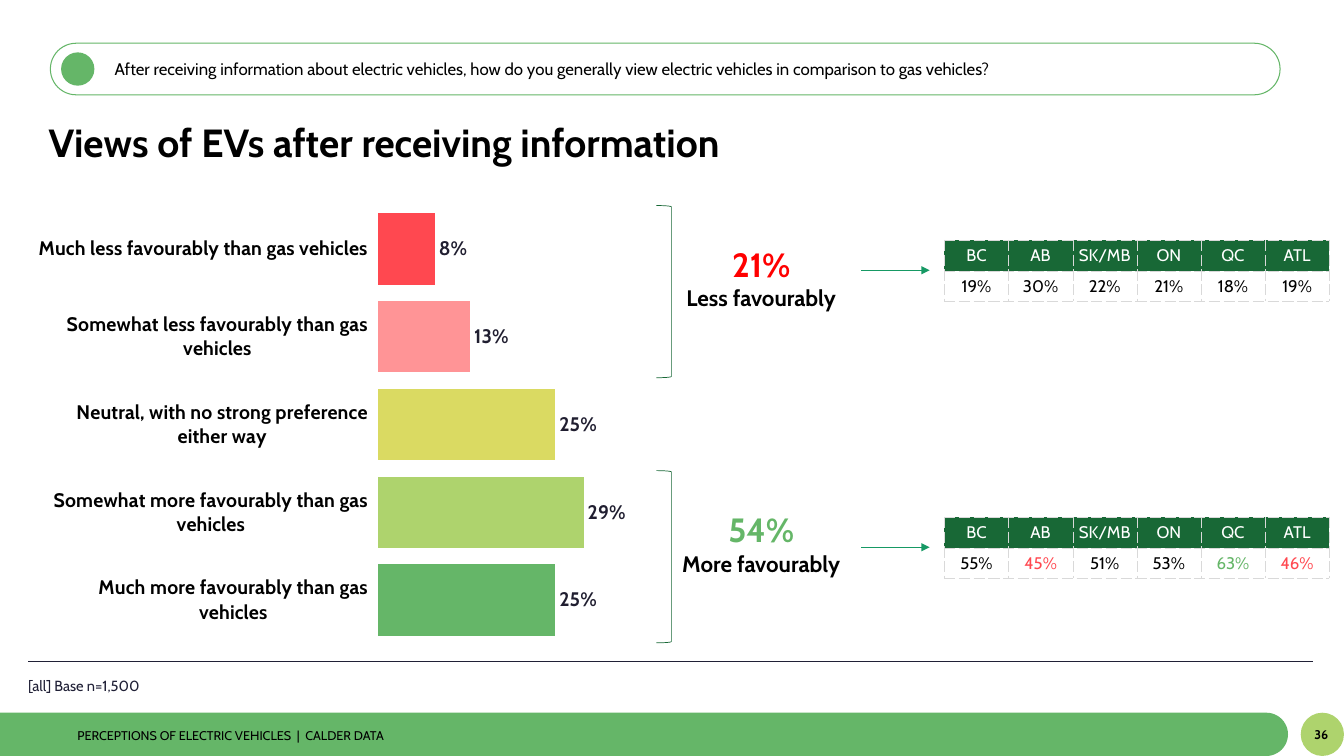
from math import cos, pi, sin

from lxml import etree
from pptx import Presentation
from pptx.chart.data import CategoryChartData
from pptx.dml.color import RGBColor
from pptx.enum.chart import XL_CHART_TYPE as CT, XL_LABEL_POSITION as LP, XL_TICK_MARK as TM
from pptx.enum.shapes import MSO_CONNECTOR as MC, MSO_SHAPE as MS
from pptx.enum.text import MSO_ANCHOR as MA, MSO_AUTO_SIZE as AS, PP_ALIGN as PA
from pptx.oxml import parse_xml
from pptx.oxml.ns import nsdecls, qn
from pptx.util import Cm, Pt

FONT = "Cabin"
BLACK = RGBColor(0x00, 0x00, 0x00)
WHITE = RGBColor(0xFF, 0xFF, 0xFF)
NAVY = RGBColor(0x20, 0x20, 0x36)
LABEL = RGBColor(0x20, 0x1E, 0x30)
GREEN = RGBColor(0x65, 0xB6, 0x68)
LIME = RGBColor(0xAE, 0xD3, 0x6D)
YELLOW = RGBColor(0xDA, 0xDA, 0x62)
PINK = RGBColor(0xFF, 0x94, 0x96)
CORAL = RGBColor(0xFF, 0x48, 0x50)
RED = RGBColor(0xFF, 0x00, 0x00)
FOREST = RGBColor(0x18, 0x68, 0x36)
TEAL = RGBColor(0x16, 0x99, 0x64)

REGIONS = ["BC", "AB", "SK/MB", "ON", "QC", "ATL"]
VIEWS = [
    ("Much less favourably than gas vehicles", 0.08, CORAL),
    ("Somewhat less favourably than gas vehicles", 0.13, PINK),
    ("Neutral, with no strong preference either way", 0.25, YELLOW),
    ("Somewhat more favourably than gas vehicles", 0.29, LIME),
    ("Much more favourably than gas vehicles", 0.25, GREEN),
]


def style(font, size, color, bold=False):
    font.name = FONT
    font.size = Pt(size)
    font.bold = bold
    font.color.rgb = color


def write(p, text, size, color, bold=False, align=PA.LEFT):
    p.alignment = align
    r = p.add_run()
    r.text = text
    style(r.font, size, color, bold)


def place(sp, x, y, w, h):
    sp.left, sp.top, sp.width, sp.height = Cm(x), Cm(y), Cm(w), Cm(h)


def add_text(s, x, y, w, h, lines, anchor=MA.TOP, align=PA.LEFT, spacing=None):
    tf = s.shapes.add_textbox(Cm(x), Cm(y), Cm(w), Cm(h)).text_frame
    tf.word_wrap = True
    tf.vertical_anchor = anchor
    for i, line in enumerate(lines):
        p = tf.add_paragraph() if i else tf.paragraphs[0]
        p.line_spacing = spacing
        write(p, *line, align=align)


def finish(sp, fill=None, line=None, width=0.75):
    sp.shadow.inherit = False
    if fill is None:
        sp.fill.background()
    else:
        sp.fill.solid()
        sp.fill.fore_color.rgb = fill
    if line is None:
        sp.line.fill.background()
    else:
        sp.line.color.rgb = line
        sp.line.width = Pt(width)


def add_shape(s, kind, x, y, w, h, **look):
    sp = s.shapes.add_shape(kind, Cm(x), Cm(y), Cm(w), Cm(h))
    finish(sp, **look)
    return sp


def add_line(s, x, y, w, color, width, arrow=False):
    c = s.shapes.add_connector(MC.STRAIGHT, Cm(x), Cm(y), Cm(x + w), Cm(y))
    c.line.color.rgb = color
    c.line.width = Pt(width)
    if arrow:
        etree.SubElement(c.line._get_or_add_ln(), qn("a:tailEnd"), type="triangle")
    etree.SubElement(c._element.spPr, qn("a:effectLst"))


def add_question(s, x, y, w, h):
    add_shape(s, MS.ROUNDED_RECTANGLE, x, y, w, h, line=GREEN).adjustments[0] = 0.5
    dot = 0.84
    add_shape(s, MS.OVAL, x + 0.27, y + (h - dot) / 2, dot, dot, fill=GREEN)
    text = ("After receiving information about electric vehicles, how do you generally "
            "view electric vehicles in comparison to gas vehicles?")
    add_text(s, x + 1.37, y + 0.27, w - 1.68, h - 0.54, [(text, 12, BLACK)], MA.MIDDLE)


def add_title(s, x, y, w, h):
    sp = s.shapes.title
    place(sp, x, y, w, h)
    tf = sp.text_frame
    tf.auto_size = AS.NONE
    tf.vertical_anchor = MA.MIDDLE
    p = tf.paragraphs[0]
    p.line_spacing = 0.9
    write(p, "Views of EVs after receiving information", 28, BLACK, True)


def add_views_chart(s, x, y, w, h):
    data = CategoryChartData(number_format="0%")
    data.categories = [name for name, _, _ in VIEWS]
    data.add_series("Series 1", [share for _, share, _ in VIEWS])
    chart = s.shapes.add_chart(CT.BAR_CLUSTERED, Cm(x), Cm(y), Cm(w), Cm(h), data).chart
    chart.has_legend = False
    chart.has_title = False
    style(chart.font, 16, BLACK, True)

    cat = chart.category_axis
    cat.reverse_order = True
    cat.major_tick_mark = TM.OUTSIDE
    cat.format.line.fill.background()
    style(cat.tick_labels.font, 14, BLACK, True)
    val = chart.value_axis
    val.minimum_scale, val.maximum_scale = 0, 1
    val.has_major_gridlines = False
    val.visible = False

    plot = chart.plots[0]
    plot.gap_width = 23
    plot.vary_by_categories = False
    for i, (_, _, color) in enumerate(VIEWS):
        fill = plot.series[0].points[i].format.fill
        fill.solid()
        fill.fore_color.rgb = color
    plot.has_data_labels = True
    labels = plot.data_labels
    labels.show_value = True
    labels.position = LP.OUTSIDE_END
    labels.number_format = "0%"
    labels.number_format_is_linked = False
    style(labels.font, 14, LABEL, True)

    area = chart._chartSpace.chart.plotArea
    for old in area.findall(qn("c:layout")):
        area.remove(old)
    area.insert(0, parse_xml(
        f'<c:layout {nsdecls("c")}><c:manualLayout><c:layoutTarget val="inner"/>'
        '<c:xMode val="edge"/><c:yMode val="edge"/><c:x val="0.316"/><c:y val="0.033"/>'
        '<c:w val="0.669"/><c:h val="0.934"/></c:manualLayout></c:layout>'))


def add_borders(cell):
    tcPr = cell._tc.get_or_add_tcPr()
    for i, side in enumerate("LRTB"):
        tcPr.insert(i, parse_xml(
            f'<a:ln{side} {nsdecls("a")} w="3175"><a:solidFill><a:srgbClr val="D9D9D9"/>'
            f'</a:solidFill><a:prstDash val="lgDash"/></a:ln{side}>'))


def add_region_table(s, x, y, w, h, shares, colors):
    t = s.shapes.add_table(2, len(REGIONS), Cm(x), Cm(y), Cm(w), Cm(h)).table
    t.first_row = t.horz_banding = False
    for col in t.columns:
        col.width = Cm(w / len(REGIONS))
    for j, (region, share) in enumerate(zip(REGIONS, shares)):
        for i, (text, color) in enumerate([(region, WHITE), (f"{share}%", colors.get(region, BLACK))]):
            cell = t.cell(i, j)
            cell.margin_left = cell.margin_right = cell.margin_top = cell.margin_bottom = 0
            cell.vertical_anchor = MA.MIDDLE
            write(cell.text_frame.paragraphs[0], text, 12, color, align=PA.CENTER)
            if i:
                cell.fill.background()
            else:
                cell.fill.solid()
                cell.fill.fore_color.rgb = FOREST
            add_borders(cell)


def add_summary(s, x, y, h, table_y, total, label, color, shares, colors):
    add_shape(s, MS.RIGHT_BRACKET, x, y, 0.38, h, line=FOREST, width=0.5)
    lines = [(total, 24, color, True), (label, 16, BLACK, True)]
    add_text(s, x + 0.13, y + 0.85, 5.03, 1.96, lines, align=PA.CENTER)
    add_line(s, x + 5.16, table_y + 0.76, 1.73, TEAL, 1, arrow=True)
    add_region_table(s, x + 7.26, table_y, 9.7, 1.54, shares, colors)


def add_footer(s, x, y, w, h):
    add_line(s, x + 0.71, y - 1.3, 32.38, NAVY, 0.5)
    add_text(s, x + 0.46, y - 0.97, 26.82, 0.84, [("[all] Base n=1,500", 10.5, NAVY)], spacing=0.9)
    bar_w, radius, steps = w - 1.41, h / 2, 24
    arc = [(x + bar_w - radius + radius * cos(a), y + radius + radius * sin(a))
           for a in (pi * (k / steps - 0.5) for k in range(steps + 1))]
    fb = s.shapes.build_freeform(Cm(x), Cm(y))
    fb.add_line_segments([(Cm(px), Cm(py)) for px, py in arc] + [(Cm(x), Cm(y + h))])
    finish(fb.convert_to_shape(), fill=GREEN)
    add_shape(s, MS.OVAL, x + w - h, y, h, h, fill=LIME)
    add_text(s, x + w - 1.28, y + 0.02, 1.42, h, [("36", 9, BLACK, True)], MA.MIDDLE, PA.CENTER, 0.9)
    name = "PERCEPTIONS OF ELECTRIC VEHICLES  |  CALDER DATA"
    add_text(s, x + 1.7, y + 0.3, 24.31, 0.53, [(name, 9, BLACK)], spacing=0.9)


def main():
    prs = Presentation()
    prs.slide_width, prs.slide_height = Cm(33.87), Cm(19.05)
    s = prs.slides.add_slide(prs.slide_layouts[5])
    add_footer(s, 0, 17.96, 33.87, 1.09)
    add_question(s, 1.27, 1.09, 30.99, 1.3)
    add_title(s, 0.97, 2.9, 30.99, 1.52)
    add_views_chart(s, 0.97, 4.78, 26.82, 11.84)
    add_summary(s, 16.54, 5.18, 4.34, 6.05, "21%", "Less favourably", RED,
                [19, 30, 22, 21, 18, 19], {})
    add_summary(s, 16.54, 11.86, 4.34, 13.03, "54%", "More favourably", GREEN,
                [55, 45, 51, 53, 63, 46], {"AB": CORAL, "QC": GREEN, "ATL": CORAL})
    prs.save("out.pptx")


if __name__ == "__main__":
    main()
